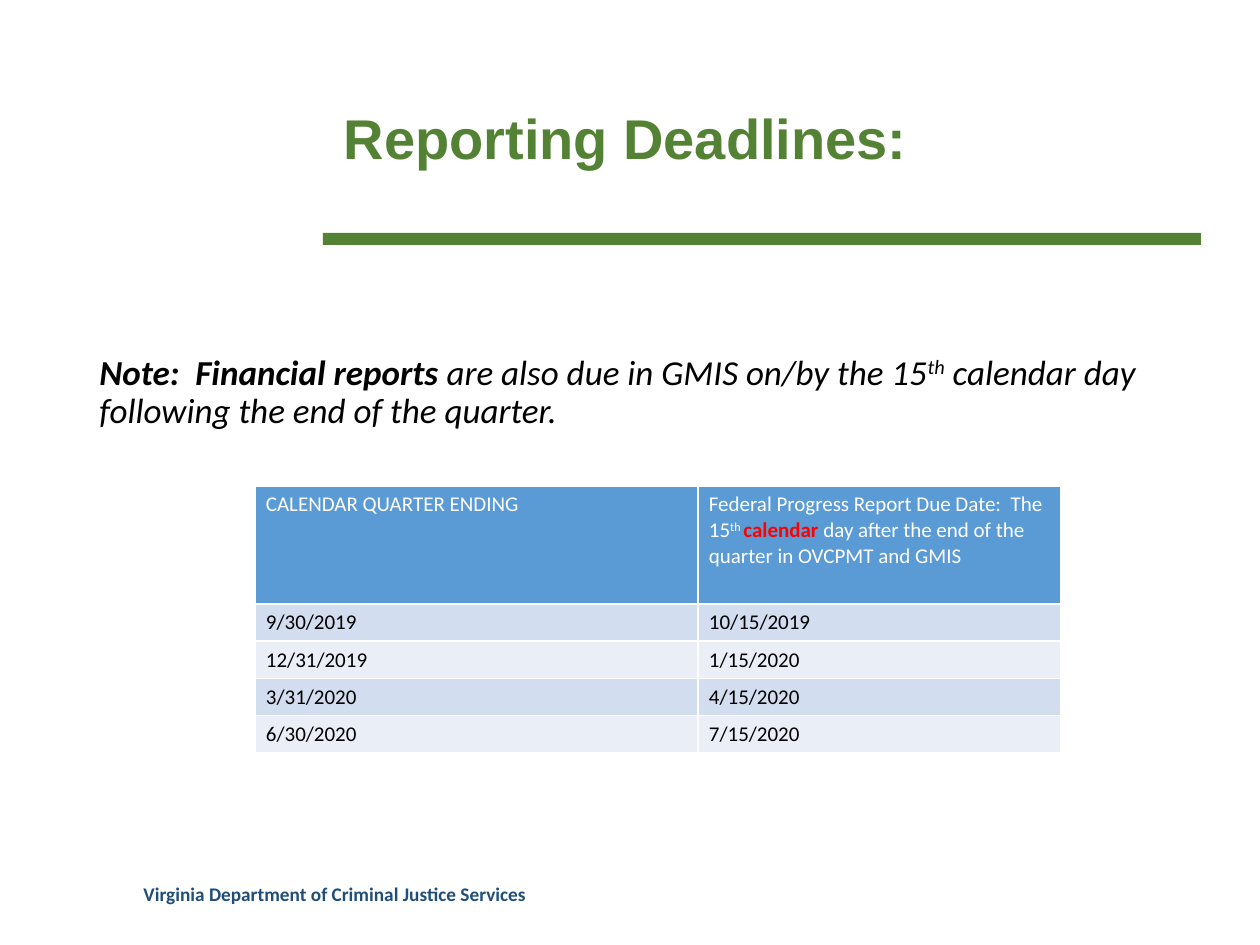
from dataclasses import dataclass

from lxml import etree
from pptx import Presentation
from pptx.dml.color import RGBColor
from pptx.enum.shapes import MSO_SHAPE as Shape
from pptx.enum.text import MSO_ANCHOR as Anchor, PP_ALIGN as Align
from pptx.oxml.ns import qn
from pptx.util import Emu, Pt

PX = 914400 / 126


def px(*lengths):
    return [Emu(round(length * PX)) for length in lengths]


@dataclass(frozen=True)
class Theme:
    green: str = "548235"
    navy: str = "1F4E79"
    black: str = "000000"
    white: str = "FFFFFF"
    red: str = "FF0000"
    header: str = "5B9BD5"
    bands: tuple = ("D2DEEF", "EAEFF7")
    heading_font: str = "Arial"
    body_font: str = "Calibri"
    title_size: int = 32
    note_size: int = 20
    table_size: int = 12
    footer_size: int = 11


class SlideBuilder:
    def __init__(self, slide, theme):
        self.slide = slide
        self.theme = theme

    def add_runs(self, frame, runs, size, color, font=None, spacing=None,
                 **style):
        frame.word_wrap = True
        paragraph = frame.paragraphs[0]
        paragraph.alignment = Align.LEFT
        if spacing:
            paragraph.line_spacing = spacing
        for text, changes in runs:
            run = paragraph.add_run()
            run.text = text
            look = {"name": font or self.theme.body_font, "size": Pt(size),
                    "color": color, **style, **changes}
            run.font.color.rgb = RGBColor.from_string(look.pop("color"))
            if look.pop("raised", False):
                run._r.get_or_add_rPr().set("baseline", "30000")
            for name, value in look.items():
                setattr(run.font, name, value)

    def title(self, text, *box):
        title = self.slide.shapes.title
        for side, length in zip(("left", "top", "width", "height"), px(*box)):
            setattr(title, side, length)
        title.text_frame.vertical_anchor = Anchor.MIDDLE
        self.add_runs(title.text_frame, [(text, {})], self.theme.title_size,
                      self.theme.green, self.theme.heading_font, 0.9,
                      bold=True)

    def bar(self, color, *box):
        bar = self.slide.shapes.add_shape(Shape.RECTANGLE, *px(*box))
        bar.shadow.inherit = False
        bar.fill.solid()
        bar.fill.fore_color.rgb = RGBColor.from_string(color)
        bar.line.fill.background()

    def text(self, runs, box, size, color, **style):
        holder = self.slide.shapes.add_textbox(*px(*box))
        self.add_runs(holder.text_frame, runs, size, color, **style)

    def outline(self, cell):
        properties = cell._tc.get_or_add_tcPr()
        for side in ("lnL", "lnR", "lnT", "lnB"):
            line = etree.SubElement(properties, qn(f"a:{side}"), w=str(Pt(1)))
            fill = etree.SubElement(line, qn("a:solidFill"))
            etree.SubElement(fill, qn("a:srgbClr"), val=self.theme.white)

    def table(self, rows, left, top, widths, heights):
        theme = self.theme
        table = self.slide.shapes.add_table(
            len(rows), len(widths),
            *px(left, top, sum(widths), sum(heights))).table
        for column, width in zip(table.columns, px(*widths)):
            column.width = width
        for row, height in zip(table.rows, px(*heights)):
            row.height = height
        for r, row in enumerate(rows):
            fill = theme.bands[(r - 1) % 2] if r else theme.header
            color = theme.black if r else theme.white
            for c, runs in enumerate(row):
                cell = table.cell(r, c)
                cell.margin_left, cell.margin_right = px(11, 11)
                cell.margin_top, cell.margin_bottom = px(6, 6)
                self.outline(cell)
                cell.fill.solid()
                cell.fill.fore_color.rgb = RGBColor.from_string(fill)
                self.add_runs(cell.text_frame, runs, theme.table_size, color,
                              bold=False)


def main():
    theme = Theme()
    deck = Presentation()
    deck.slide_width, deck.slide_height = px(1260, 945)
    page = SlideBuilder(deck.slides.add_slide(deck.slide_layouts[5]), theme)

    page.bar(theme.green, 323, 233, 878, 12)
    page.title("Reporting Deadlines:", 331, 50, 842, 183)

    note = [
        ("Note:  Financial reports", {"bold": True}),
        (" are also due in GMIS on/by the 15", {}),
        ("th", {"raised": True}),
        (" calendar day following the end of the quarter.", {}),
    ]
    page.text(note, (87, 349, 1086, 90), theme.note_size, theme.black,
              spacing=0.9, italic=True)

    due_heading = [
        ("Federal Progress Report Due Date:  The 15", {}),
        ("th ", {"raised": True}),
        ("calendar", {"color": theme.red, "bold": True}),
        (" day after the end of the quarter in OVCPMT and GMIS", {}),
    ]
    deadlines = [
        ("9/30/2019", "10/15/2019"),
        ("12/31/2019", "1/15/2020"),
        ("3/31/2020", "4/15/2020"),
        ("6/30/2020", "7/15/2020"),
    ]
    rows = [[[("CALENDAR QUARTER ENDING", {})], due_heading]]
    rows += [[[(date, {})] for date in pair] for pair in deadlines]
    page.table(rows, 255, 486, (443, 363), [118] + [37] * len(deadlines))

    page.text([("Virginia Department of Criminal Justice Services", {})],
              (131, 876, 712, 50), theme.footer_size, theme.navy, bold=True)

    deck.save("out.pptx")


if __name__ == "__main__":
    main()
